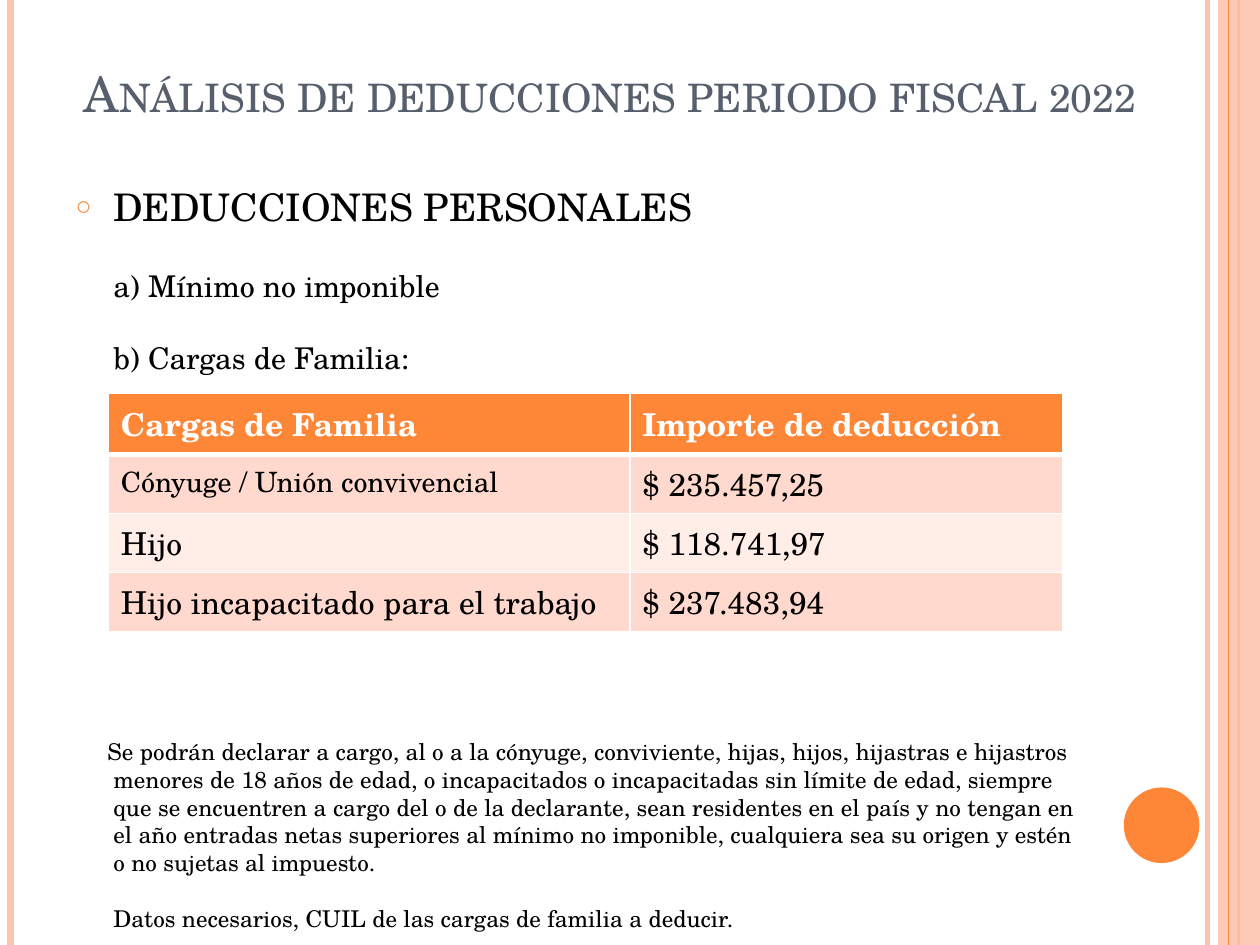
import pptx
import pptx.util
import pptx.dml.color
import pptx.enum.shapes
import pptx.enum.text
import pptx.oxml.ns
import lxml.etree

Pt = pptx.util.Pt
RGB = pptx.dml.color.RGBColor
ORANGE = RGB(0xFE, 0x86, 0x37)
PEACH = RGB(0xFE, 0xC3, 0xAE)
ROSE = RGB(0xFF, 0xD9, 0xCE)
BLUSH = RGB(0xFF, 0xED, 0xE8)
SLATE = RGB(0x57, 0x5F, 0x6D)
BLACK = RGB(0, 0, 0)
WHITE = RGB(255, 255, 255)
FONT = "TeX Gyre Schola"
HIGH = 540

BACK = [(690, PEACH, 3), (6, PEACH, 4.5), (707.8, ORANGE, 1.5)]
FRONT = (702, ORANGE, 0.75)
ITEMS = [
    ("DEDUCCIONES PERSONALES", 21.7, 4.4, -21.6),
    ("a) Mínimo no imponible", 17.1, 21.6, 0),
    ("b) Cargas de Familia:", 17.1, 20.6, 0),
    ("Se podrán declarar a cargo, al o a la cónyuge, conviviente, hijas, hijos, "
     "hijastras e hijastros menores de 18 años de edad, o incapacitados o "
     "incapacitadas sin límite de edad, siempre que se encuentren a cargo del o de "
     "la declarante, sean residentes en el país y no tengan en el año entradas netas "
     "superiores al mínimo no imponible, cualquiera sea su origen y estén o no "
     "sujetas al impuesto.", 13.2, 207, -3.4),
    ("Datos necesarios, CUIL de las cargas de familia a deducir.", 13.2, 16, 0),
]
ROWS = [
    ("Cargas de Familia", "Importe de deducción"),
    ("Cónyuge / Unión convivencial", "$ 235.457,25"),
    ("Hijo", "$ 118.741,97"),
    ("Hijo incapacitado para el trabajo", "$ 237.483,94"),
]


def add_tag(node, name, **attrs):
    """Append a drawing element to a node."""
    return lxml.etree.SubElement(node, pptx.oxml.ns.qn("a:" + name), **attrs)


def add_run(para, text, size, color, bold=False):
    """Append a styled run to a paragraph."""
    run = para.add_run()
    run.text = text
    run.font.name = FONT
    run.font.size = Pt(size)
    run.font.bold = bold
    run.font.color.rgb = color
    return run


def place(shape, left, top, width, height):
    """Move and size a shape."""
    shape.left, shape.top = Pt(left), Pt(top)
    shape.width, shape.height = Pt(width), Pt(height)


def add_line(slide, x, color, width):
    """Draw a full-height vertical line."""
    line = slide.shapes.add_connector(
        pptx.enum.shapes.MSO_CONNECTOR.STRAIGHT, Pt(x), Pt(0), Pt(x), Pt(HIGH))
    line.line.color.rgb = color
    line.line.width = Pt(width)
    add_tag(line._element.spPr, "effectLst")


def add_form(slide, kind, box, color, alpha=100):
    """Draw a plain filled shape."""
    form = slide.shapes.add_shape(kind, *map(Pt, box))
    form.shadow.inherit = False
    form.fill.solid()
    form.fill.fore_color.rgb = color
    form.line.fill.background()
    if alpha < 100:
        tone = form._element.spPr.find(".//" + pptx.oxml.ns.qn("a:srgbClr"))
        add_tag(tone, "alpha", val=str(alpha * 1000))


def fill_title(title):
    """Write the slide title in small capitals."""
    place(title, 22.5, 21.6, 652.3, 51.8)
    frame = title.text_frame
    frame.auto_size = pptx.enum.text.MSO_AUTO_SIZE.NONE
    frame.vertical_anchor = pptx.enum.text.MSO_ANCHOR.BOTTOM
    para = frame.paragraphs[0]
    para.alignment = pptx.enum.text.PP_ALIGN.CENTER
    run = add_run(para, "Análisis de deducciones periodo fiscal 2022", 28, SLATE)
    run.font._element.set("cap", "small")


def fill_body(body):
    """Write the list, with a bullet on its heading."""
    place(body, 36, 101.5, 588.2, 432)
    frame = body.text_frame
    frame.auto_size = pptx.enum.text.MSO_AUTO_SIZE.NONE
    for rank, (text, size, gap, indent) in enumerate(ITEMS):
        para = frame.add_paragraph() if rank else frame.paragraphs[0]
        para.space_before = Pt(gap)
        props = para._p.get_or_add_pPr()
        props.set("marL", str(Pt(21.6)))
        props.set("indent", str(Pt(indent)))
        if rank:
            add_tag(props, "buNone")
        else:
            add_tag(add_tag(props, "buClr"), "srgbClr", val=str(ORANGE))
            add_tag(props, "buSzPct", val="70000")
            add_tag(props, "buChar", char="○")
        add_run(para, text, size, BLACK)


def add_rule(cell, width):
    """Draw a white line under a cell."""
    edge = add_tag(cell._tc.get_or_add_tcPr(), "lnB", w=str(Pt(width)))
    add_tag(add_tag(edge, "solidFill"), "srgbClr", val=str(WHITE))


def add_grid(slide):
    """Draw the table of family deductions."""
    grid = slide.shapes.add_table(
        len(ROWS), 2, Pt(61.9), Pt(224.6), Pt(545.4), Pt(135)).table
    grid.columns[0].width, grid.columns[1].width = Pt(298), Pt(247.4)
    for i, row in enumerate(ROWS):
        grid.rows[i].height = Pt(33.75)
        for j, text in enumerate(row):
            cell = grid.cell(i, j)
            add_rule(cell, 1 if i else 3)
            cell.fill.solid()
            cell.fill.fore_color.rgb = (ROSE if i % 2 else BLUSH) if i else ORANGE
            size = 16 if (i, j) == (1, 0) else 18
            add_run(cell.text_frame.paragraphs[0], text, size,
                    BLACK if i else WHITE, i == 0)


def main():
    """Build and save the slide."""
    deck = pptx.Presentation()
    deck.slide_width, deck.slide_height = Pt(720), Pt(HIGH)
    slide = deck.slides.add_slide(deck.slide_layouts[1])
    kinds = pptx.enum.shapes.MSO_SHAPE
    for line in BACK:
        add_line(slide, *line)
    add_form(slide, kinds.RECTANGLE, (696, 0, 24, HIGH), PEACH, 87)
    add_line(slide, *FRONT)
    add_form(slide, kinds.OVAL, (642.2, 450, 43.2, 43.2), ORANGE)
    fill_title(slide.shapes.title)
    fill_body(slide.placeholders[1])
    add_grid(slide)
    deck.save("out.pptx")


if __name__ == "__main__":
    main()
